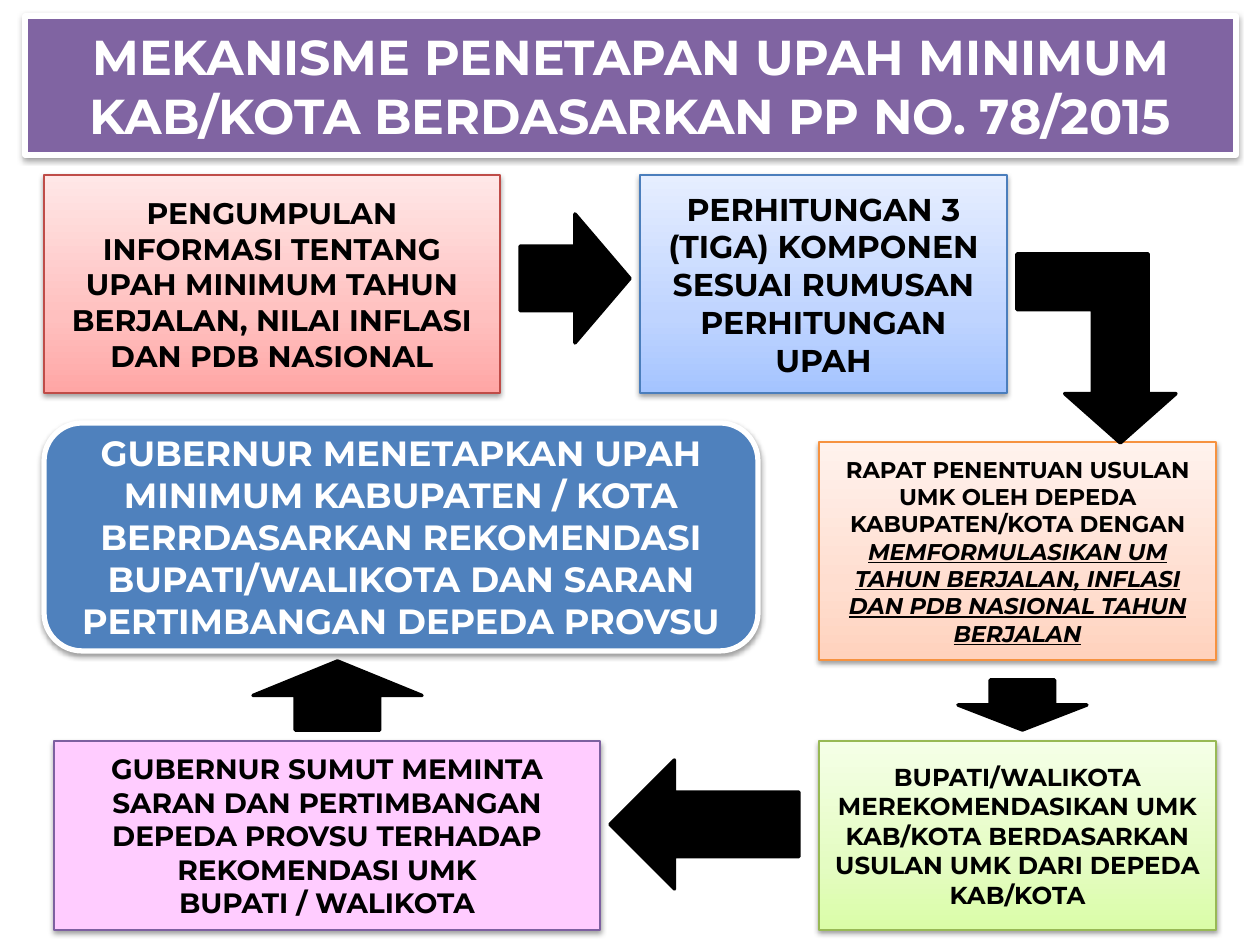
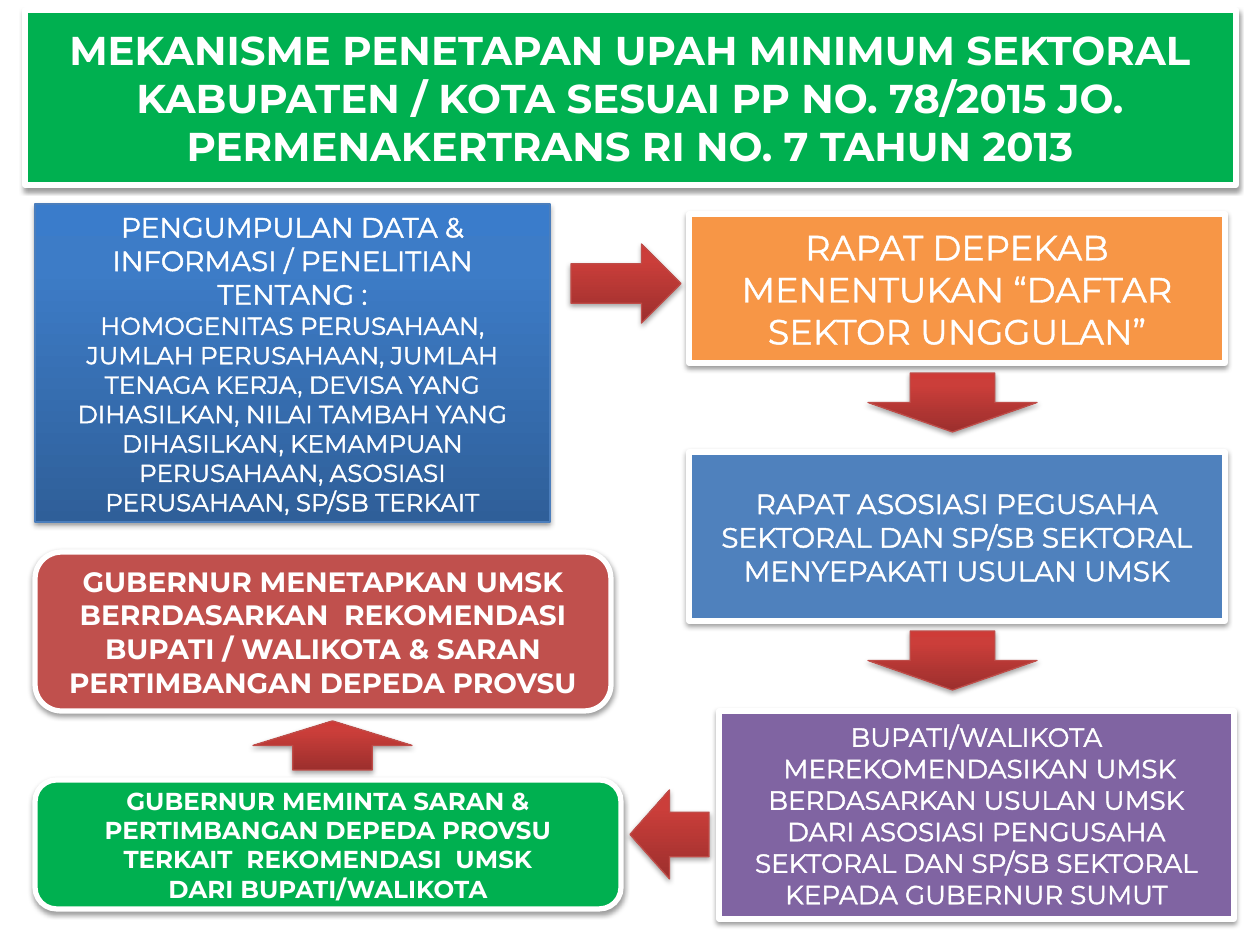
from lxml import etree
from pptx import Presentation
from pptx import util as u
from pptx.dml.color import RGBColor
from pptx.enum import shapes, text
from pptx.oxml.ns import nsdecls, qn
from pptx.oxml import parse_xml

SCALE = 914400 / 126
FONT = "Montserrat"
WHITE, BLACK = "FFFFFF", "000000"
BLUE, RED, GREEN, PURPLE, ORANGE = "4F81BD", "C0504D", "00B050", "8064A2", "F79646"

PALE_RED = [(0, "FFA6A5"), (35, "FFC0BF"), (100, "FFE7E7")]
PALE_BLUE = [(0, "A4C4FF"), (35, "BFD4FF"), (100, "E6EEFF")]
PALE_ORANGE = [(0, "FFD2BD"), (35, "FFDED0"), (100, "FFF2ED")]
PALE_GREEN = [(0, "DAFDA7"), (35, "E4FCC2"), (100, "F5FFE7")]
DEEP_BLUE = [(0, "2F5F99"), (80, "3D7CC7"), (100, "3A7CCB")]
DEEP_RED = [(0, "9C2F2D"), (80, "CB3E3A"), (100, "CE3B37")]

KIND = shapes.MSO_SHAPE
RECT, ROUNDED = KIND.RECTANGLE, KIND.FLOWCHART_ALTERNATE_PROCESS
BLACK_ARROW = dict(fill=BLACK, line=(BLACK, 2), shadow=0)
RED_ARROW = dict(fill=DEEP_RED, line=("BF4C48", 0.75), shadow=35)


def px(n):
    """Turn px into EMU."""
    return u.Emu(round(n * SCALE))


def rgb(value):
    """Turn a hex string into a colour."""
    return RGBColor.from_string(value)


def paint(sp, fill, line, shadow=38):
    """Set a solid or bottom-to-top gradient fill, the line and the shadow."""
    if isinstance(fill, str):
        sp.fill.solid()
        sp.fill.fore_color.rgb = rgb(fill)
    else:
        sp.fill.gradient()
        sp.fill.gradient_angle = 90
        stops = sp._element.spPr.find(".//" + qn("a:gsLst"))
        for old in list(stops):
            stops.remove(old)
        for pos, value in fill:
            gs = etree.SubElement(stops, qn("a:gs"), pos=str(pos * 1000))
            etree.SubElement(gs, qn("a:srgbClr"), val=value)
    sp.line.color.rgb = rgb(line[0])
    sp.line.width = u.Pt(line[1])
    sp.shadow.inherit = False
    if shadow:
        effects = sp._element.spPr.find(qn("a:effectLst"))
        effects.append(parse_xml(
            f'<a:outerShdw {nsdecls("a")} blurRad="39370" dist="20320" dir="5400000" '
            f'rotWithShape="0"><a:srgbClr val="{BLACK}"><a:alpha val="{shadow * 1000}"/>'
            '</a:srgbClr></a:outerShdw>'))


def style_run(r, size, color, bold, outline=False):
    """Format one run, with a white outline if asked."""
    r.font.name, r.font.size, r.font.bold = FONT, u.Pt(size), bold
    r.font.color.rgb = rgb(color)
    if outline:
        ln = parse_xml(f'<a:ln {nsdecls("a")} w="18415"><a:solidFill>'
                       f'<a:srgbClr val="{WHITE}"/></a:solidFill></a:ln>')
        r._r.get_or_add_rPr().insert(0, ln)


def write(sp, lines, size, color=WHITE, bold=True, outline=False):
    """Fill a shape with centred paragraphs, each a text or a (text, size) pair."""
    tf = sp.text_frame
    tf.word_wrap = True
    tf.auto_size = text.MSO_AUTO_SIZE.NONE
    tf.vertical_anchor = text.MSO_ANCHOR.MIDDLE
    for i, item in enumerate(lines):
        words, points = (item, size) if isinstance(item, str) else item
        p = tf.paragraphs[0] if i == 0 else tf.add_paragraph()
        p.text = words
        p.alignment = text.PP_ALIGN.CENTER
        for r in p.runs:
            style_run(r, points, color, bold, outline)


def shape(s, kind, box, fill, line=(WHITE, 3), shadow=38):
    """Add a painted preset shape in a px box."""
    sp = s.shapes.add_shape(kind, *map(px, box))
    paint(sp, fill, line, shadow)
    return sp


def step(s, box, lines, size, fill, line=(WHITE, 3), kind=RECT, **style):
    """Add one labelled step of the procedure."""
    sp = shape(s, kind, box, fill, line)
    write(sp, lines, size, **style)
    return sp


def titled_slide(prs, box, title, size, fill):
    """Add a title-only slide whose title is a framed band."""
    s = prs.slides.add_slide(prs.slide_layouts[5])
    sp = s.shapes.title
    sp.left, sp.top, sp.width, sp.height = map(px, box)
    paint(sp, fill, (WHITE, 3))
    write(sp, [title], size)
    return s


def minimum_wage_slide(prs):
    """Build the slide on the district minimum wage."""
    s = titled_slide(prs, (25, 16, 1211, 139),
                     "MEKANISME PENETAPAN UPAH MINIMUM KAB/KOTA BERDASARKAN PP NO. 78/2015",
                     28, PURPLE)
    top, bottom, right = 175, 741, 819
    step(s, (44, top, 456, 218),
         ["PENGUMPULAN INFORMASI TENTANG UPAH MINIMUM TAHUN BERJALAN, "
          "NILAI INFLASI DAN PDB NASIONAL"],
         17, PALE_RED, ("BF4C48", 0.75), color=BLACK)
    step(s, (640, top, 367, 218),
         ["PERHITUNGAN 3 (TIGA) KOMPONEN SESUAI RUMUSAN PERHITUNGAN UPAH"],
         18, PALE_BLUE, ("4B7EBC", 0.75), color=BLACK)
    meeting = step(s, (right, 442, 397, 218),
                   ["RAPAT PENENTUAN USULAN UMK OLEH DEPEDA KABUPATEN/KOTA DENGAN "],
                   13, PALE_ORANGE, ("F69240", 0.75), color=BLACK)
    r = meeting.text_frame.paragraphs[0].add_run()
    r.text = "MEMFORMULASIKAN UM TAHUN BERJALAN, INFLASI DAN PDB NASIONAL TAHUN BERJALAN"
    style_run(r, 13, BLACK, True)
    r.font.italic = r.font.underline = True
    step(s, (right, bottom, 397, 189),
         ["BUPATI/WALIKOTA MEREKOMENDASIKAN UMK KAB/KOTA BERDASARKAN "
          "USULAN UMK DARI DEPEDA KAB/KOTA"],
         14, PALE_GREEN, ("98B955", 0.75), color=BLACK)
    step(s, (54, bottom, 546, 189),
         ["GUBERNUR SUMUT MEMINTA SARAN DAN PERTIMBANGAN DEPEDA PROVSU "
          "TERHADAP REKOMENDASI UMK", "BUPATI / WALIKOTA"],
         16, "FFCCFF", ("7D60A0", 0.75), color=BLACK)
    step(s, (44, 423, 714, 228),
         ["GUBERNUR MENETAPKAN UPAH MINIMUM KABUPATEN / KOTA BERRDASARKAN REKOMENDASI "
          "BUPATI/WALIKOTA DAN SARAN PERTIMBANGAN DEPEDA PROVSU"],
         20, BLUE, kind=ROUNDED)
    for kind, box in [(KIND.RIGHT_ARROW, (520, 214, 110, 129)),
                      (KIND.DOWN_ARROW, (958, 680, 129, 50)),
                      (KIND.LEFT_ARROW, (610, 760, 189, 129)),
                      (KIND.UP_ARROW, (253, 661, 169, 69))]:
        shape(s, kind, box, **BLACK_ARROW)
    bent = shape(s, KIND.BENT_UP_ARROW, (1017, 254, 159, 189), **BLACK_ARROW)
    for i, value in enumerate((0.35, 0.35, 0.31)):
        bent.adjustments[i] = value
    bent._element.spPr.find(qn("a:xfrm")).set("flipV", "1")


def sector_wage_slide(prs):
    """Build the slide on the sectoral minimum wage."""
    s = titled_slide(prs, (25, 10, 1211, 175),
                     "MEKANISME PENETAPAN UPAH MINIMUM SEKTORAL KABUPATEN / KOTA SESUAI "
                     "PP NO. 78/2015 JO. PERMENAKERTRANS RI NO. 7 TAHUN 2013",
                     23, GREEN)
    left, right = 35, 689
    thin = dict(bold=False, outline=True)
    step(s, (left, 204, 515, 318),
         ["PENGUMPULAN DATA & INFORMASI / PENELITIAN TENTANG :",
          ("HOMOGENITAS PERUSAHAAN, JUMLAH PERUSAHAAN, JUMLAH TENAGA KERJA, DEVISA YANG "
           "DIHASILKAN, NILAI TAMBAH YANG DIHASILKAN, KEMAMPUAN PERUSAHAAN, ASOSIASI "
           "PERUSAHAAN, SP/SB TERKAIT", 14)],
         16, DEEP_BLUE, ("4B7EBC", 0.75), **thin)
    step(s, (right, 214, 536, 149),
         ["RAPAT DEPEKAB MENENTUKAN “DAFTAR SEKTOR UNGGULAN”"], 20, ORANGE, **thin)
    step(s, (right, 452, 536, 169),
         ["RAPAT ASOSIASI PEGUSAHA SEKTORAL DAN SP/SB SEKTORAL MENYEPAKATI USULAN UMSK"],
         16, BLUE, **thin)
    step(s, (719, 711, 515, 208),
         ["BUPATI/WALIKOTA",
          " MEREKOMENDASIKAN UMSK BERDASARKAN USULAN UMSK DARI ASOSIASI PENGUSAHA "
          "SEKTORAL DAN SP/SB SEKTORAL KEPADA GUBERNUR SUMUT"],
         15, PURPLE, **thin)
    step(s, (left, 552, 576, 159),
         ["GUBERNUR MENETAPKAN UMSK BERRDASARKAN  REKOMENDASI BUPATI / WALIKOTA & SARAN "
          "PERTIMBANGAN DEPEDA PROVSU"],
         16, RED, kind=ROUNDED)
    step(s, (left, 780, 586, 129),
         ["GUBERNUR MEMINTA SARAN & PERTIMBANGAN DEPEDA PROVSU TERKAIT  REKOMENDASI  UMSK",
          "DARI BUPATI/WALIKOTA"],
         14, GREEN, kind=ROUNDED)
    for kind, box in [(KIND.RIGHT_ARROW, (571, 244, 110, 79)),
                      (KIND.DOWN_ARROW, (868, 373, 169, 59)),
                      (KIND.DOWN_ARROW, (868, 631, 169, 59)),
                      (KIND.LEFT_ARROW, (630, 790, 79, 89)),
                      (KIND.UP_ARROW, (253, 721, 159, 49))]:
        shape(s, kind, box, **RED_ARROW)


def main():
    """Build and save the presentation."""
    prs = Presentation()
    prs.slide_width, prs.slide_height = px(1260), px(945)
    minimum_wage_slide(prs)
    sector_wage_slide(prs)
    prs.save("out.pptx")


if __name__ == "__main__":
    main()
